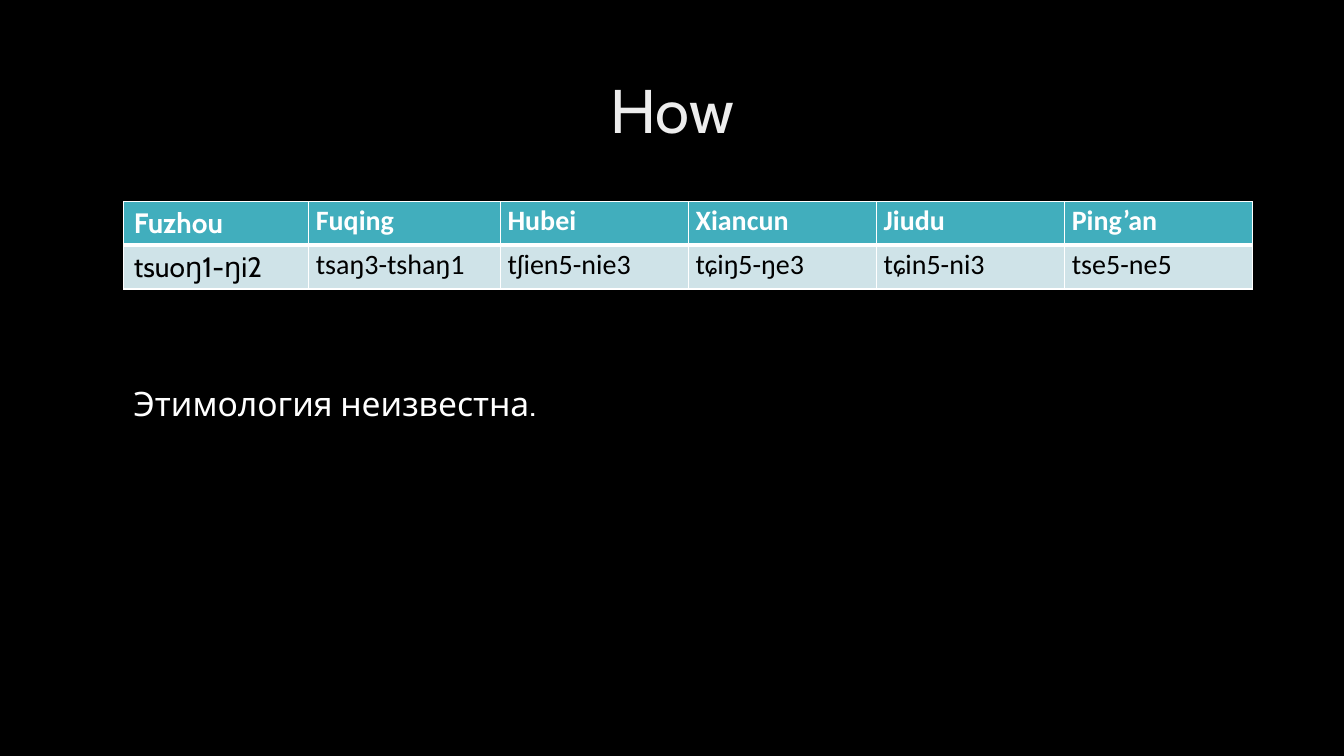
import dataclasses
import typing

import lxml.etree
import pptx
import pptx.dml.color
import pptx.enum.text
import pptx.oxml.ns
import pptx.util

Cm = pptx.util.Cm
Pt = pptx.util.Pt


@dataclasses.dataclass(frozen=True)
class Theme:
    background: str = "000000"
    title: str = "EDEDED"
    light: str = "FFFFFF"
    dark: str = "000000"
    header_fill: str = "41AEBD"
    body_fill: str = "CFE3E8"
    title_size: int = 44
    note_size: int = 24
    table_size: int = 20
    main_font: str = "Cabin"
    table_font: str = "Calibri"


THEME = Theme()


@dataclasses.dataclass(frozen=True)
class TextStyle:
    font: str
    size: int
    color: str
    bold: bool = False


@dataclasses.dataclass(frozen=True)
class TextItem:
    text: str
    left: float
    top: float
    width: float
    height: float
    style: TextStyle
    frame_format: dict[str, typing.Any]
    para_format: dict[str, typing.Any]


@dataclasses.dataclass(frozen=True)
class Dialect:
    name: str
    word: str
    width: float = 4.74
    font: str = THEME.table_font


TEXTS = [
    TextItem(
        "How", 2.34, 1.02, 29.21, 3.68,
        TextStyle(THEME.main_font, THEME.title_size, THEME.title),
        {"word_wrap": True, "vertical_anchor": pptx.enum.text.MSO_ANCHOR.MIDDLE},
        {"alignment": pptx.enum.text.PP_ALIGN.CENTER, "line_spacing": 0.9},
    ),
    TextItem(
        "Этимология неизвестна.", 3.12, 9.53, 24.61, 1.28,
        TextStyle(THEME.main_font, THEME.note_size, THEME.light),
        {"word_wrap": True, "auto_size": pptx.enum.text.MSO_AUTO_SIZE.SHAPE_TO_FIT_TEXT},
        {},
    ),
]

DIALECTS = [
    Dialect("Fuzhou", "tsuoŋ1-ŋi2", 4.66, THEME.main_font),
    Dialect("Fuqing", "tsaŋ3-tshaŋ1", 4.83),
    Dialect("Hubei", "tʃien5-nie3"),
    Dialect("Xiancun", "tɕiŋ5-ŋe3"),
    Dialect("Jiudu", "tɕin5-ni3"),
    Dialect("Ping’an", "tse5-ne5"),
]

TABLE_LEFT, TABLE_TOP, ROW_HEIGHT = 3.12, 5.08, 1.1
INSET_CELL = {
    "margin_left": Cm(0.18), "margin_right": Cm(0.18),
    "margin_top": 0, "margin_bottom": 0,
}


def apply_format(target: typing.Any, values: dict[str, typing.Any]) -> None:
    for name, value in values.items():
        setattr(target, name, value)


def rgb(color: str) -> pptx.dml.color.RGBColor:
    return pptx.dml.color.RGBColor.from_string(color)


def write_text(para: typing.Any, text: str, style: TextStyle) -> None:
    span = para.add_run()
    span.text = text
    apply_format(span.font, {"name": style.font, "size": Pt(style.size), "bold": style.bold})
    span.font.color.rgb = rgb(style.color)


def add_text(page: typing.Any, item: TextItem) -> None:
    box = page.shapes.add_textbox(
        Cm(item.left), Cm(item.top), Cm(item.width), Cm(item.height)
    )
    apply_format(box.text_frame, item.frame_format)
    para = box.text_frame.paragraphs[0]
    apply_format(para, item.para_format)
    write_text(para, item.text, item.style)


def add_borders(cell: typing.Any, widths: dict[str, int]) -> None:
    qn = pptx.oxml.ns.qn
    properties = cell._tc.get_or_add_tcPr()
    for side, width in widths.items():
        line = lxml.etree.SubElement(properties, qn(f"a:ln{side}"), w=str(Pt(width)))
        fill = lxml.etree.SubElement(line, qn("a:solidFill"))
        lxml.etree.SubElement(fill, qn("a:srgbClr"), val=THEME.light)


def fill_cell(cell: typing.Any, dialect: Dialect, is_header: bool) -> None:
    add_borders(cell, {"L": 1, "R": 1, "T": 1 if is_header else 3, "B": 3 if is_header else 1})
    cell.fill.solid()
    cell.fill.fore_color.rgb = rgb(THEME.header_fill if is_header else THEME.body_fill)
    para = cell.text_frame.paragraphs[0]
    if dialect.font == THEME.table_font:
        apply_format(cell, INSET_CELL)
        para.line_spacing = 1.07
    color = THEME.light if is_header else THEME.dark
    style = TextStyle(dialect.font, THEME.table_size, color, is_header)
    write_text(para, dialect.name if is_header else dialect.word, style)


def add_dialect_table(page: typing.Any, dialects: list[Dialect]) -> None:
    total_width = sum(dialect.width for dialect in dialects)
    table = page.shapes.add_table(
        2, len(dialects), Cm(TABLE_LEFT), Cm(TABLE_TOP), Cm(total_width), Cm(2 * ROW_HEIGHT)
    ).table
    table.horz_banding = False
    for column, dialect in enumerate(dialects):
        table.columns[column].width = Cm(dialect.width)
        for row in range(2):
            fill_cell(table.cell(row, column), dialect, row == 0)


def main() -> None:
    deck = pptx.Presentation()
    apply_format(deck, {"slide_width": Cm(33.87), "slide_height": Cm(19.05)})
    page = deck.slides.add_slide(deck.slide_layouts[6])
    page.background.fill.solid()
    page.background.fill.fore_color.rgb = rgb(THEME.background)
    title, note = TEXTS
    add_text(page, title)
    add_dialect_table(page, DIALECTS)
    add_text(page, note)
    deck.save("out.pptx")


if __name__ == "__main__":
    main()
